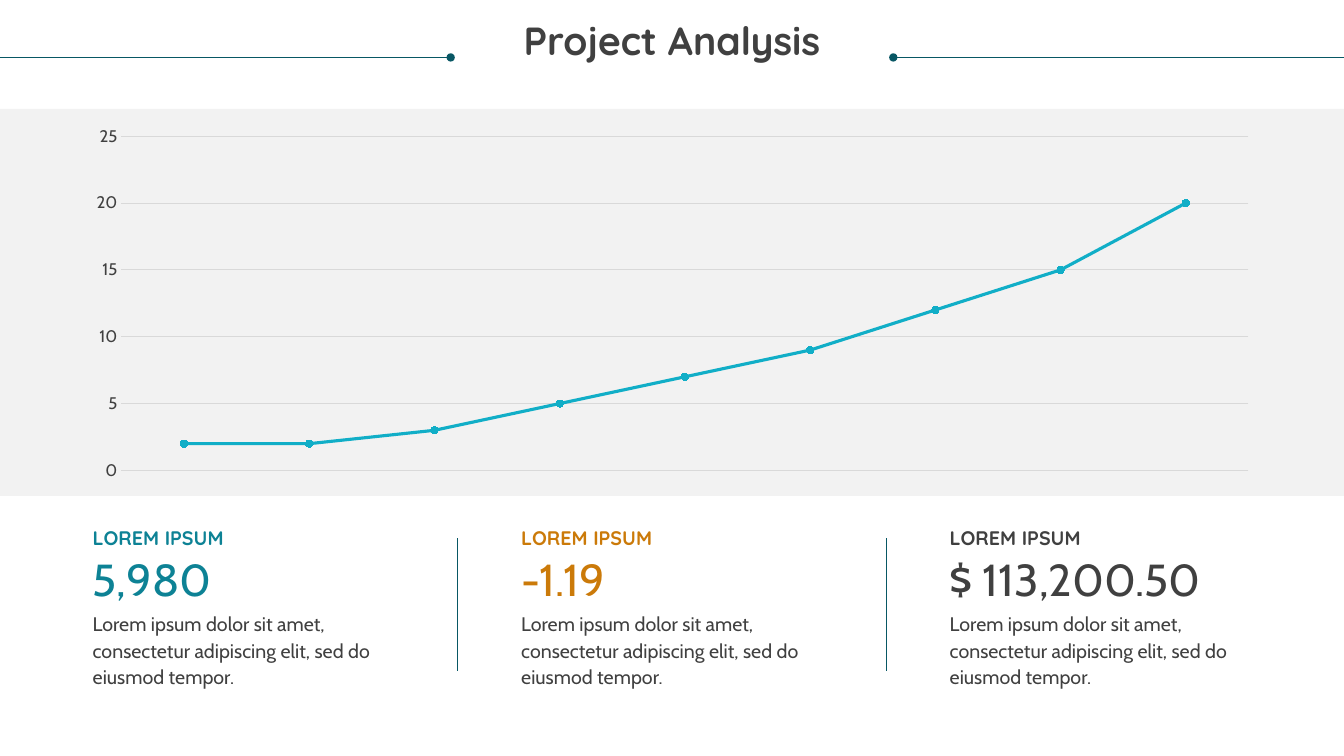
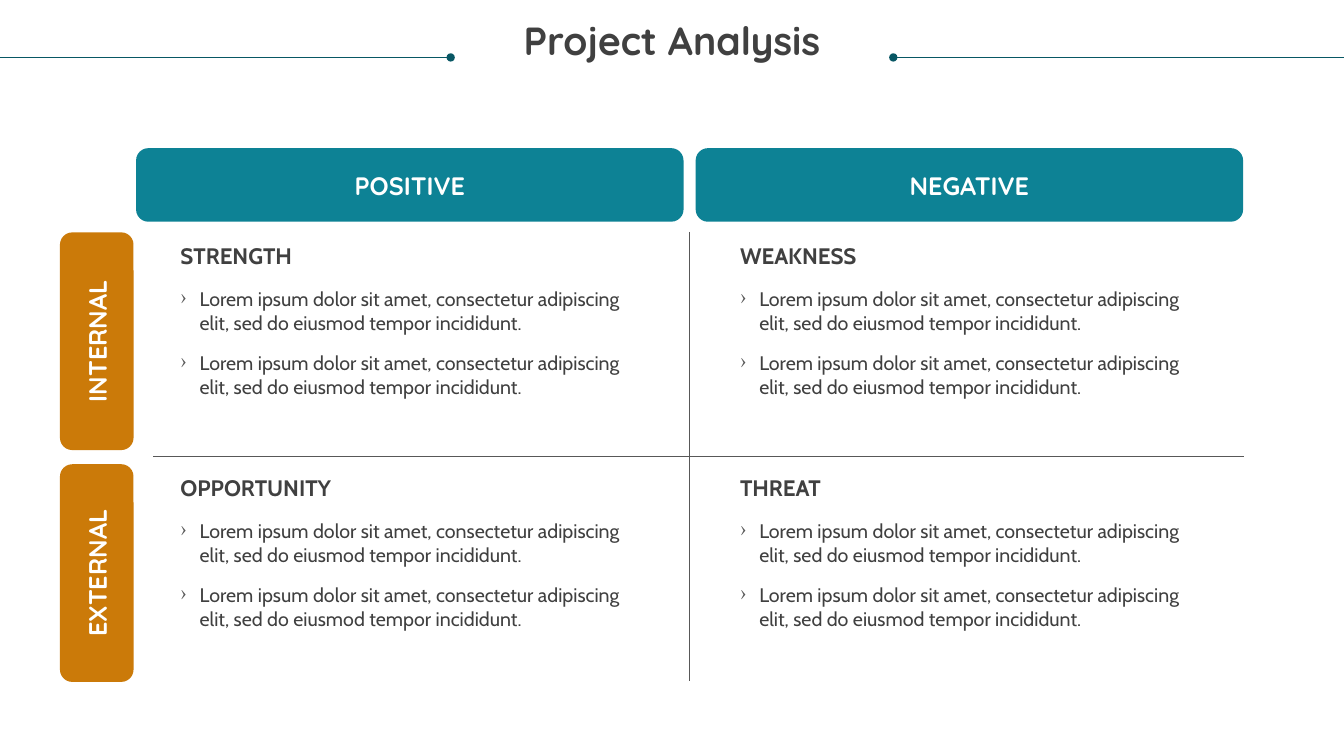
from dataclasses import dataclass

from lxml import etree
from pptx import Presentation
from pptx import util as u
from pptx.chart.data import CategoryChartData
from pptx.dml.color import RGBColor
from pptx.enum import chart as ch, shapes, text
from pptx.oxml.ns import qn

Inches, Pt = u.Inches, u.Pt


@dataclass(frozen=True)
class Theme:
    ink: RGBColor = RGBColor.from_string("404040")
    teal: RGBColor = RGBColor.from_string("0D8295")
    orange: RGBColor = RGBColor.from_string("CB7A09")
    cyan: RGBColor = RGBColor.from_string("11AEC7")
    rule: RGBColor = RGBColor.from_string("085764")
    cross: RGBColor = RGBColor.from_string("585858")
    grid: RGBColor = RGBColor.from_string("D9D9D9")
    band: RGBColor = RGBColor.from_string("F2F2F2")
    white: RGBColor = RGBColor.from_string("FFFFFF")
    head_font: str = "Quicksand"
    body_font: str = "Cabin"
    title: int = 28
    figure: int = 32
    label: int = 18
    heading: int = 16
    body: int = 14
    axis: int = 12


T = Theme()


def write(tf, words, size, color, font=T.body_font, bold=False,
          align=text.PP_ALIGN.LEFT, spacing=None):
    """Fill a text frame with words in one style, without insets."""
    tf.word_wrap = True
    tf.margin_left = tf.margin_right = tf.margin_top = tf.margin_bottom = 0
    tf.text = words
    for p in tf.paragraphs:
        p.alignment = align
        p.line_spacing = spacing
        for r in p.runs:
            r.font.size, r.font.name, r.font.bold = Pt(size), font, bold
            r.font.color.rgb = color


def add_line(s, x1, y1, x2, y2, color, dot=False):
    """Draw a thin straight line, with a dot at its end if asked."""
    line = s.shapes.add_connector(shapes.MSO_CONNECTOR.STRAIGHT, Inches(x1),
                                  Inches(y1), Inches(x2), Inches(y2))
    line.line.color.rgb = color
    line.line.width = Pt(0.5)
    if dot:
        etree.SubElement(line.line._get_or_add_ln(), qn("a:tailEnd"), type="oval")
    etree.SubElement(line._element.spPr, qn("a:effectLst"))


prs = Presentation()
prs.slide_width, prs.slide_height = Inches(13.33), Inches(7.5)

# Both slides: title between two dotted rules
for _ in range(2):
    s = prs.slides.add_slide(prs.slide_layouts[5])
    title = s.shapes.title
    title.left, title.top = Inches(0.25), Inches(0.21)
    title.width, title.height = Inches(12.83), Inches(0.85)
    write(title.text_frame, "Project Analysis", T.title, T.ink, T.head_font, True,
          text.PP_ALIGN.CENTER, 0.9)
    title.text_frame.auto_size = text.MSO_AUTO_SIZE.NONE
    title.text_frame.vertical_anchor = text.MSO_ANCHOR.TOP
    for outer, inner in ((0, 4.47), (13.33, 8.86)):
        add_line(s, outer, 0.57, inner, 0.57, T.rule, dot=True)

growth, swot = prs.slides

# Slide 1: grey band with the line chart
band = growth.shapes.add_shape(shapes.MSO_SHAPE.RECTANGLE, 0, Inches(1.08),
                               prs.slide_width, Inches(3.84))
band.shadow.inherit = False
band.fill.solid()
band.fill.fore_color.rgb = T.band
band.line.fill.background()

data = CategoryChartData()
data.categories = [str(n) for n in range(1, 10)]
data.add_series("Series 1", (2, 2, 3, 5, 7, 9, 12, 15, 20))
chart = growth.shapes.add_chart(ch.XL_CHART_TYPE.LINE_MARKERS, Inches(0.72), Inches(1.18),
                                Inches(11.9), Inches(3.66), data).chart
chart.has_legend = chart.has_title = False
chart.font.name, chart.font.size = T.body_font, Pt(T.axis)
chart.font.color.rgb = T.ink
chart.category_axis.visible = False
axis = chart.value_axis
axis.minimum_scale, axis.maximum_scale, axis.major_unit = 0, 25, 5
axis.major_tick_mark = axis.minor_tick_mark = ch.XL_TICK_MARK.NONE
axis.format.line.fill.background()
axis.major_gridlines.format.line.color.rgb = T.grid
axis.major_gridlines.format.line.width = Pt(0.75)
plot = chart.plots[0]
plot.vary_by_categories = False
series = plot.series[0]
series.smooth = False
series.format.line.color.rgb = T.cyan
series.format.line.width = Pt(2.25)
series.marker.style, series.marker.size = ch.XL_MARKER_STYLE.CIRCLE, 5
series.marker.format.fill.solid()
series.marker.format.fill.fore_color.rgb = T.cyan
series.marker.format.line.color.rgb = T.cyan

# Slide 1: three key figures with dividers between them
LOREM = "Lorem ipsum dolor sit amet, consectetur adipiscing elit, sed do eiusmod tempor"
column_step = 4.25
for i, (figure, color) in enumerate((("5,980", T.teal), ("-1.19", T.orange),
                                     ("$ 113,200.50", T.ink))):
    x = 0.92 + i * column_step
    for y, h, words, size, ink, font, bold, spacing in (
            (5.19, 0.24, "LOREM IPSUM", T.body, color, T.head_font, True, Pt(19)),
            (5.47, 0.54, figure, T.figure, color, T.body_font, False, None),
            (6.04, 0.78, LOREM + ".", T.body, T.ink, T.body_font, False, Pt(19))):
        box = growth.shapes.add_textbox(Inches(x), Inches(y), Inches(3), Inches(h))
        write(box.text_frame, words, size, ink, font, bold, spacing=spacing)
    if i:
        add_line(growth, x - 0.63, 5.34, x - 0.63, 6.66, T.rule)

# Slide 2: column and row labels
across, down = 5.55, 2.3
for words, x, y, w, turn, color in (
        ("POSITIVE", 1.35, 1.47, 5.43, 0, T.teal),
        ("NEGATIVE", 1.35 + across, 1.47, 5.43, 0, T.teal),
        ("INTERNAL", -0.12, 3.02, 2.16, 270, T.orange),
        ("EXTERNAL", -0.12, 3.02 + down, 2.16, 270, T.orange)):
    sp = swot.shapes.add_shape(shapes.MSO_SHAPE.ROUNDED_RECTANGLE, Inches(x), Inches(y),
                               Inches(w), Inches(0.73))
    sp.rotation = turn
    sp.shadow.inherit = False
    sp.fill.solid()
    sp.fill.fore_color.rgb = color
    sp.line.fill.background()
    write(sp.text_frame, words, T.label, T.white, T.head_font, True, text.PP_ALIGN.CENTER)
    sp.text_frame.vertical_anchor = text.MSO_ANCHOR.MIDDLE

# Slide 2: cross between the quadrants
add_line(swot, 1.52, 4.53, 12.34, 4.53, T.cross)
add_line(swot, 6.84, 2.3, 6.84, 6.76, T.cross)

# Slide 2: heading and bullets of each quadrant
for i, heading in enumerate(("STRENGTH", "WEAKNESS", "OPPORTUNITY", "THREAT")):
    row, col = divmod(i, 2)
    x, y = 1.79 + col * across, 2.4 + row * down
    box = swot.shapes.add_textbox(Inches(x), Inches(y), Inches(4.55), Inches(0.27))
    write(box.text_frame, heading, T.heading, T.ink, bold=True)
    box = swot.shapes.add_textbox(Inches(x), Inches(y + 0.45), Inches(4.55), Inches(1.11))
    write(box.text_frame, "\n".join([LOREM + " incididunt."] * 2), T.body, T.ink)
    for p in box.text_frame.paragraphs:
        p.space_before = Pt(12)
        pPr = p._p.get_or_add_pPr()
        pPr.set("marL", str(Inches(0.19)))
        pPr.set("indent", str(-Inches(0.19)))
        bullet_color = etree.SubElement(pPr, qn("a:buClr"))
        etree.SubElement(bullet_color, qn("a:srgbClr"), val=str(T.cross))
        etree.SubElement(pPr, qn("a:buChar"), char="›")

prs.save("out.pptx")
